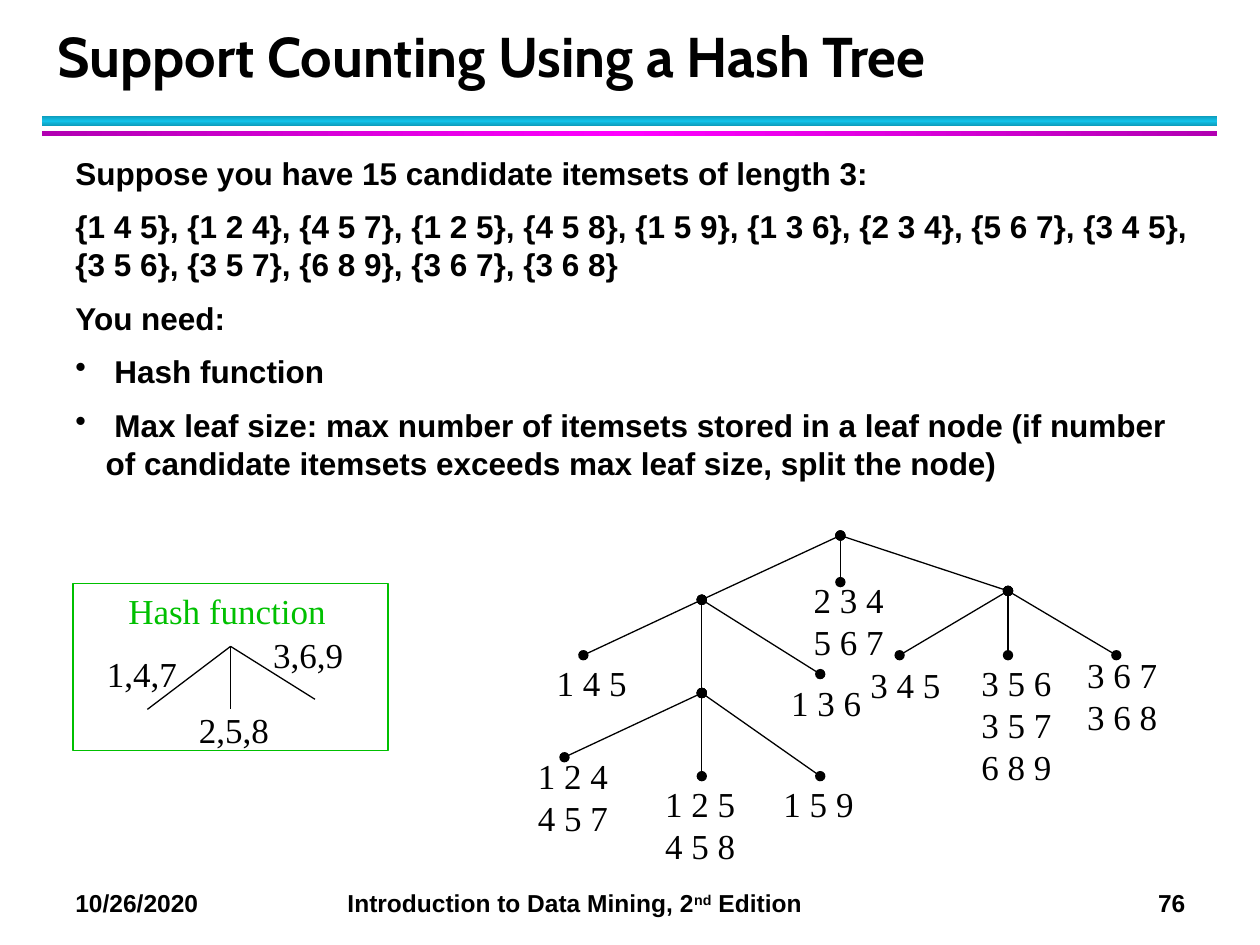
import dataclasses
import pptx
import pptx.dml.color
import pptx.enum.shapes
import pptx.enum.text
import pptx.oxml
import pptx.oxml.ns
import pptx.util
from pptx.util import Inches


@dataclasses.dataclass(frozen=True)
class Theme:
    """Colours, fonts and type sizes of the deck."""
    ink: str = "000000"
    green: str = "00C000"
    cyan: tuple = ("0E9BBA", "12C2E9", "0E9BBA")
    magenta: tuple = ("B200B2", "FF00FF", "B200B2")
    title_font: str = "Cabin"
    body_font: str = "Arial"
    label_font: str = "Times New Roman"
    title_size: int = 32
    body_size: int = 18
    label_size: int = 20
    footer_size: int = 14
    body_gap: int = 9
    hairline: float = 0.75


@dataclasses.dataclass(frozen=True)
class Box:
    """An area of the slide in inches."""
    left: float
    top: float
    width: float
    height: float

    def inner(self, left, top, width, height):
        """Return an area placed relative to this one."""
        return Box(self.left + left, self.top + top, width, height)

    def inches(self):
        """Return the four lengths for python-pptx."""
        return [Inches(length) for length in dataclasses.astuple(self)]


@dataclasses.dataclass(frozen=True)
class Node:
    """A hash tree node with the itemsets of a leaf or the branches below it."""
    x: float
    y: float
    itemsets: tuple = ()
    label_at: tuple = (0, 0)
    branches: tuple = ()


THEME = Theme()
DRAWING_NS = pptx.oxml.ns.nsdecls("a")

DEEP_BRANCH = Node(1.4, 1.25, branches=(
    Node(0.31, 1.76, ("1 2 4", "4 5 7"), (0, 1.69)),
    Node(1.4, 1.91, ("1 2 5", "4 5 8"), (1.01, 1.91)),
    Node(2.34, 1.91, ("1 5 9",), (1.95, 1.91))))
LEFT_BRANCH = Node(1.4, 0.51, branches=(
    Node(0.46, 0.95, ("1 4 5",), (0.15, 0.95)),
    DEEP_BRANCH,
    Node(2.34, 1.1, ("1 3 6",), (2.01, 1.11))))
RIGHT_BRANCH = Node(3.83, 0.44, branches=(
    Node(2.97, 0.95, ("3 4 5",), (2.64, 0.97)),
    Node(3.83, 0.95, ("3 5 6", "3 5 7", "6 8 9"), (3.52, 0.95)),
    Node(4.69, 0.95, ("3 6 7", "3 6 8"), (4.36, 0.89))))
ROOT = Node(2.5, 0, branches=(
    LEFT_BRANCH,
    Node(2.5, 0.37, ("2 3 4", "5 6 7"), (2.19, 0.29)),
    RIGHT_BRANCH))

REQUIREMENTS = (
    ("Suppose you have 15 candidate itemsets of length 3:", False),
    ("{1 4 5}, {1 2 4}, {4 5 7}, {1 2 5}, {4 5 8}, {1 5 9}, {1 3 6}, {2 3 4}, "
     "{5 6 7}, {3 4 5}, {3 5 6}, {3 5 7}, {6 8 9}, {3 6 7}, {3 6 8}", False),
    ("You need:", False),
    (" Hash function", True),
    (" Max leaf size: max number of itemsets stored in a leaf node (if number "
     "of candidate itemsets exceeds max leaf size, split the node)", True))


def rgb(colour):
    """Turn a hex string into a colour."""
    return pptx.dml.color.RGBColor.from_string(colour)


def add_frame(slide, box, wrap=True):
    """Add a text box and return its text frame."""
    frame = slide.shapes.add_textbox(*box.inches()).text_frame
    frame.word_wrap = wrap
    return frame


def add_run(paragraph, text, font, size, colour=THEME.ink, bold=False):
    """Add one styled run to a paragraph."""
    run = paragraph.add_run()
    run.text = text
    run.font.name = font
    run.font.size = pptx.util.Pt(size)
    run.font.bold = bold
    run.font.color.rgb = rgb(colour)
    return run


def add_paragraphs(frame, entries):
    """Yield one paragraph of the frame with each entry."""
    for index, entry in enumerate(entries):
        yield (frame.add_paragraph() if index else frame.paragraphs[0]), entry


def add_label(slide, box, lines, colour=THEME.ink):
    """Add a short unwrapped label in the diagram face."""
    for paragraph, line in add_paragraphs(add_frame(slide, box, wrap=False), lines):
        add_run(paragraph, line, THEME.label_font, THEME.label_size, colour)


def add_edge(slide, box, start, end, dots=False):
    """Draw a thin line between two points of the box."""
    ends = [Inches(length) for x, y in (start, end) for length in (box.left + x, box.top + y)]
    edge = slide.shapes.add_connector(pptx.enum.shapes.MSO_CONNECTOR.STRAIGHT, *ends)
    edge.line.width = pptx.util.Pt(THEME.hairline)
    edge.line.color.rgb = rgb(THEME.ink)
    properties = edge._element.spPr
    if dots:
        outline = properties.find(pptx.oxml.ns.qn("a:ln"))
        for tag in ("headEnd", "tailEnd"):
            outline.append(pptx.oxml.parse_xml(f'<a:{tag} {DRAWING_NS} type="oval"/>'))
    properties.append(pptx.oxml.parse_xml(f"<a:effectLst {DRAWING_NS}/>"))


def add_rule(slide, box, colours, angle):
    """Add a bar with a symmetric gradient."""
    rule = slide.shapes.add_shape(pptx.enum.shapes.MSO_SHAPE.RECTANGLE, *box.inches())
    rule.shadow.inherit = False
    rule.line.fill.background()
    stops = "".join(f'<a:gs pos="{index * 50000}"><a:srgbClr val="{colour}"/></a:gs>'
                    for index, colour in enumerate(colours))
    gradient = (f'<a:gradFill {DRAWING_NS} rotWithShape="1"><a:gsLst>{stops}</a:gsLst>'
                f'<a:lin ang="{angle * 60000}" scaled="0"/></a:gradFill>')
    rule._element.spPr.insert(2, pptx.oxml.parse_xml(gradient))


def add_header(slide, box):
    """Place the title above its two rules."""
    frame = add_frame(slide, box.inner(0.03, 0, 9.06, 0.58))
    frame.vertical_anchor = pptx.enum.text.MSO_ANCHOR.BOTTOM
    title = frame.paragraphs[0]
    title.line_spacing = pptx.util.Pt(36)
    add_run(title, "Support Counting Using a Hash Tree",
            THEME.title_font, THEME.title_size, bold=True)
    add_rule(slide, box.inner(0, 0.75, box.width, 0.08), THEME.cyan, 90)
    add_rule(slide, box.inner(0, 0.87, box.width, 0.04), THEME.magenta, 0)


def add_requirements(slide, box):
    """Place the candidate itemsets and the bulleted needs."""
    for paragraph, (text, bulleted) in add_paragraphs(add_frame(slide, box), REQUIREMENTS):
        if text != REQUIREMENTS[0][0]:
            paragraph.space_before = pptx.util.Pt(THEME.body_gap)
        if bulleted:
            properties = paragraph._p.get_or_add_pPr()
            properties.set("marL", str(Inches(0.24)))
            properties.set("indent", str(-Inches(0.24)))
            properties.append(pptx.oxml.parse_xml(f'<a:buChar {DRAWING_NS} char="•"/>'))
        add_run(paragraph, text, THEME.body_font, THEME.body_size, bold=True)


def add_hash_function(slide, box):
    """Place the framed key of the three hash branches."""
    border = slide.shapes.add_shape(pptx.enum.shapes.MSO_SHAPE.RECTANGLE, *box.inches())
    border.shadow.inherit = False
    border.fill.background()
    border.line.color.rgb = rgb(THEME.green)
    border.line.width = pptx.util.Pt(THEME.hairline)
    add_label(slide, box.inner(0.34, 0, 1.77, 0.43), ["Hash function"], THEME.green)
    for end, keys, left, top in (((0.59, 1), "1,4,7", 0.17, 0.5),
                                 ((1.25, 1), "2,5,8", 0.9, 0.94),
                                 ((1.92, 0.92), "3,6,9", 1.49, 0.35)):
        add_edge(slide, box, (1.25, 0.5), end)
        add_label(slide, box.inner(left, top, 0.76, 0.43), [keys])


def add_hash_tree(slide, box, node):
    """Place a node's itemsets and, below it, all its branches."""
    if node.itemsets:
        height = 0.1 + 0.33 * len(node.itemsets)
        add_label(slide, box.inner(*node.label_at, 0.76, height), node.itemsets)
    for branch in node.branches:
        add_edge(slide, box, (node.x, node.y), (branch.x, branch.y), dots=True)
        add_hash_tree(slide, box, branch)


def add_footer(slide, box):
    """Place the date, book title and page number on tab stops."""
    footer = add_frame(slide, box).paragraphs[0]
    stops = "".join(f'<a:tab pos="{Inches(position)}" algn="{side}"/>'
                    for position, side in ((2.16, "l"), (8.81, "r")))
    footer._p.get_or_add_pPr().append(
        pptx.oxml.parse_xml(f"<a:tabLst {DRAWING_NS}>{stops}</a:tabLst>"))
    for text, baseline in (("10/26/2020\tIntroduction to Data Mining, 2", 0),
                           ("nd", 30000), (" Edition\t76", 0)):
        run = add_run(footer, text, THEME.body_font, THEME.footer_size, bold=True)
        run._r.get_or_add_rPr().set("baseline", str(baseline))


def main():
    """Build the slide and save it."""
    deck = pptx.Presentation()
    deck.slide_width, deck.slide_height = Inches(10), Inches(7.5)
    slide = deck.slides.add_slide(deck.slide_layouts[6])
    add_header(slide, Box(0.33, 0.17, 9.33, 0.91))
    add_requirements(slide, Box(0.5, 1.17, 9.08, 2.81))
    add_hash_function(slide, Box(0.58, 4.63, 2.5, 1.33))
    add_hash_tree(slide, Box(4.17, 4.25, 5.12, 2.68), ROOT)
    add_footer(slide, Box(0.5, 7, 9.33, 0.34))
    deck.save("out.pptx")


if __name__ == "__main__":
    main()
